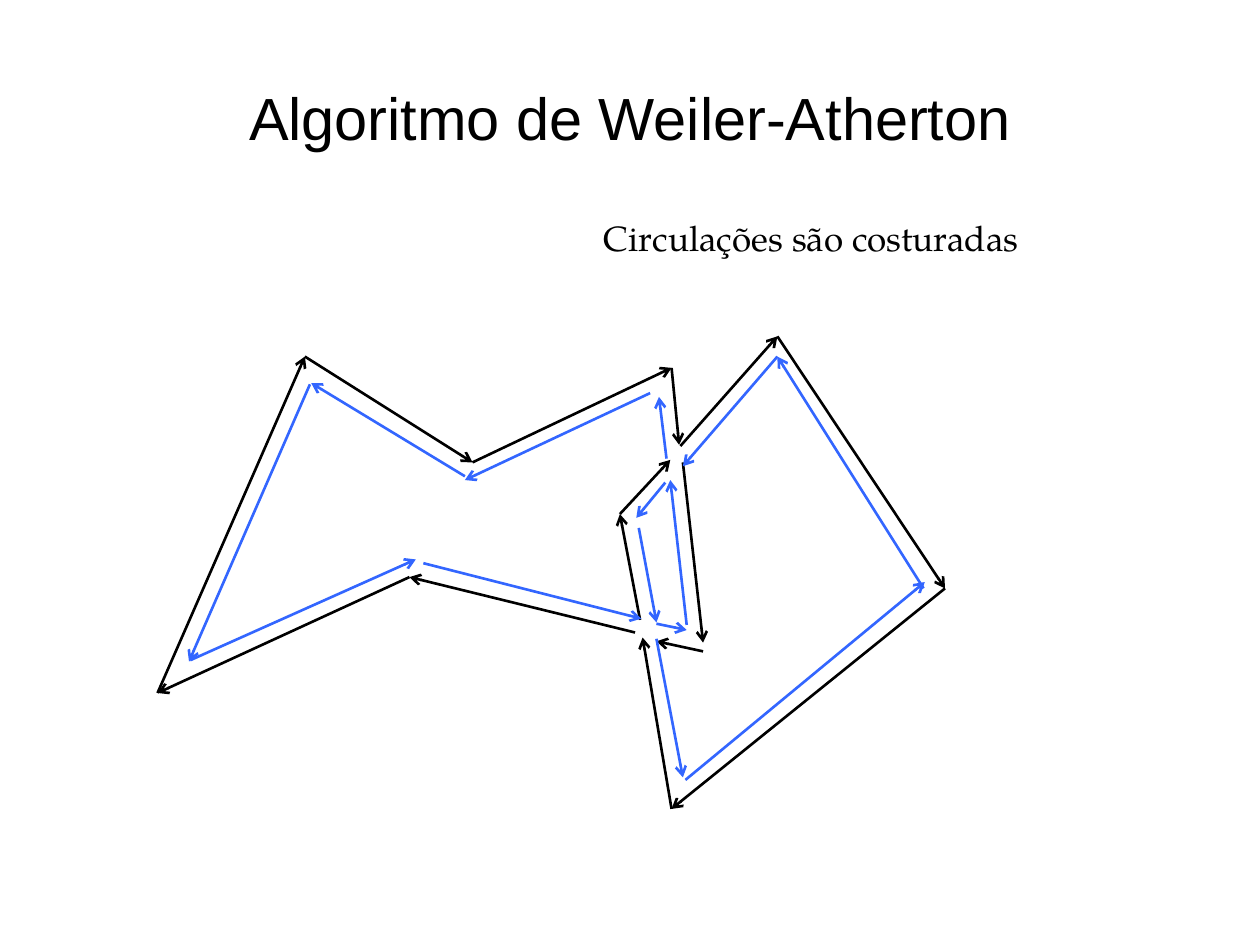
from lxml.etree import SubElement
from pptx import Presentation
from pptx.dml.color import RGBColor
from pptx.enum.shapes import MSO_CONNECTOR
from pptx.enum.text import MSO_ANCHOR, MSO_AUTO_SIZE, PP_ALIGN
from pptx.oxml.ns import qn
from pptx.util import Inches, Pt

COLORS = {"black": "000000", "blue": "3366FF"}

prs = Presentation()
prs.slide_width, prs.slide_height = Inches(10), Inches(7.5)
slide = prs.slides.add_slide(prs.slide_layouts[6])


def add_text(text, box, size, font, anchor=MSO_ANCHOR.TOP, wrap=True,
             auto_size=MSO_AUTO_SIZE.NONE):
    frame = slide.shapes.add_textbox(*map(Inches, box)).text_frame
    frame.word_wrap = wrap
    frame.auto_size = auto_size
    frame.vertical_anchor = anchor
    paragraph = frame.paragraphs[0]
    paragraph.alignment = PP_ALIGN.CENTER
    run = paragraph.add_run()
    run.text = text
    run.font.size = Pt(size)
    run.font.name = font
    run.font.color.rgb = RGBColor.from_string(COLORS["black"])


def add_arrow(start, end, color, arrow_end):
    """Draw a line with an open arrowhead at its "headEnd" (start) or "tailEnd" (end)."""
    arrow = slide.shapes.add_connector(
        MSO_CONNECTOR.STRAIGHT, *map(Inches, (*start, *end)))
    arrow.line.color.rgb = RGBColor.from_string(COLORS[color])
    arrow.line.width = Pt(1.5)
    SubElement(arrow.line._get_or_add_ln(), qn(f"a:{arrow_end}"), type="arrow")
    SubElement(arrow._element.spPr, qn("a:effectLst"))


add_text("Algoritmo de Weiler-Atherton", (0.5, 0.3, 9, 1.25), 34, "Arial",
         anchor=MSO_ANCHOR.MIDDLE)

# Outer circulations, each arrow pointing at its second point
outer_edges = [
    ((1.25, 5.5), (2.42, 2.83)),
    ((2.42, 2.83), (3.75, 3.67)),
    ((3.75, 3.67), (5.33, 2.92)),
    ((5.33, 2.92), (5.39, 3.53)),
    ((5.58, 5.17), (5.21, 5.09)),
    ((3.25, 4.58), (1.25, 5.5)),
    ((5.4, 3.54), (6.17, 2.67)),
    ((6.17, 2.67), (7.5, 4.67)),
    ((7.5, 4.67), (5.33, 6.42)),
    ((5.33, 6.42), (5.1, 5.06)),
    ((5.42, 3.67), (5.58, 5.1)),
    ((4.92, 4.08), (5.32, 3.65)),
    ((5.08, 4.92), (4.92, 4.08)),
    ((5.04, 5.02), (3.25, 4.58)),
]

# Inner circulations run the other way, each arrow pointing at its first point
inner_edges = [
    ((5.42, 3.7), (6.17, 2.83)),
    ((6.17, 2.83), (7.33, 4.67)),
    ((7.34, 4.62), (5.44, 6.19)),
    ((5.42, 6.17), (5.21, 5.07)),
    ((1.5, 5.25), (2.46, 3.05)),
    ((2.47, 3.04), (3.69, 3.78)),
    ((3.69, 3.81), (5.16, 3.12)),
    ((5.23, 3.15), (5.29, 3.64)),
    ((5.45, 5), (5.21, 4.95)),
    ((3.3, 4.44), (1.51, 5.24)),
    ((5.32, 3.81), (5.45, 4.96)),
    ((5.05, 4.11), (5.28, 3.83)),
    ((5.21, 4.94), (5.07, 4.19)),
    ((5.09, 4.91), (3.36, 4.47)),
]

for edges, color, arrow_end in ((outer_edges, "black", "tailEnd"),
                                (inner_edges, "blue", "headEnd")):
    for start, end in edges:
        add_arrow(start, end, color, arrow_end)

add_text("Circulações são costuradas", (4.69, 1.67, 3.5, 0.43), 20,
         "TeX Gyre Pagella", wrap=False,
         auto_size=MSO_AUTO_SIZE.SHAPE_TO_FIT_TEXT)

prs.save("out.pptx")
